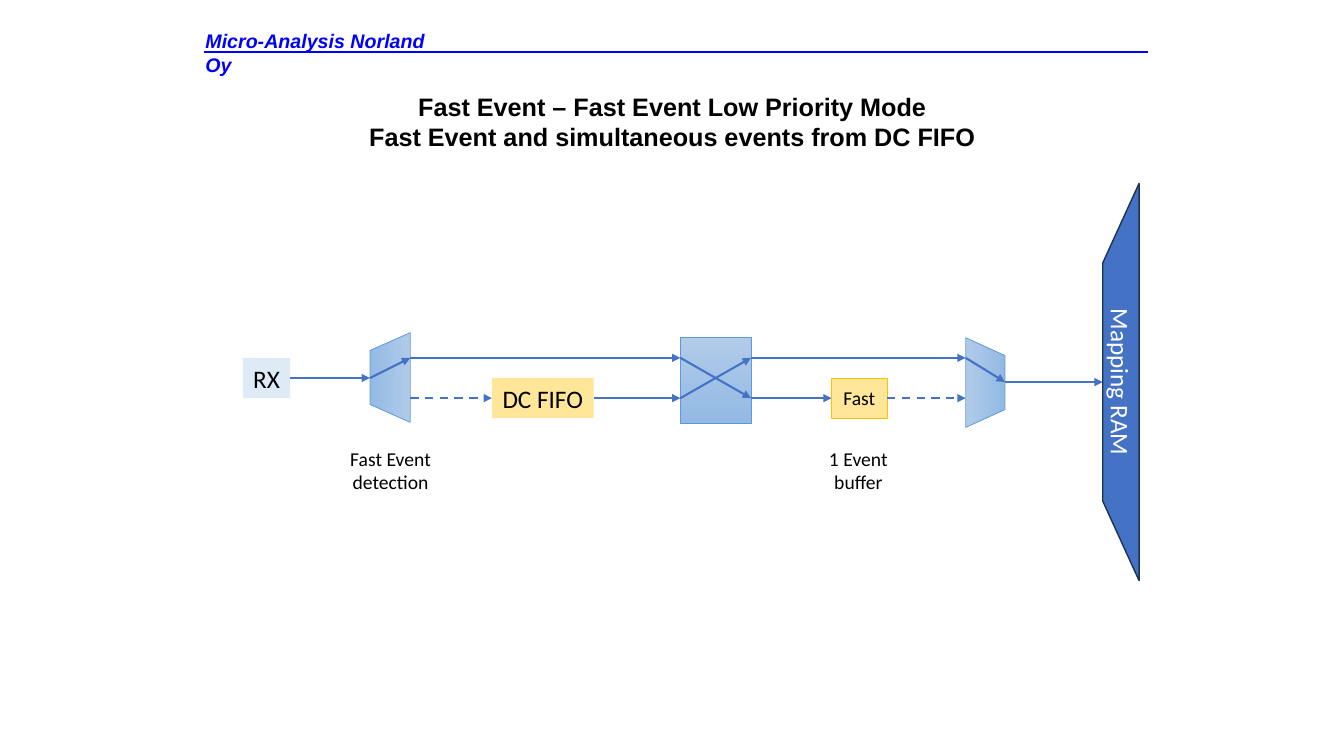
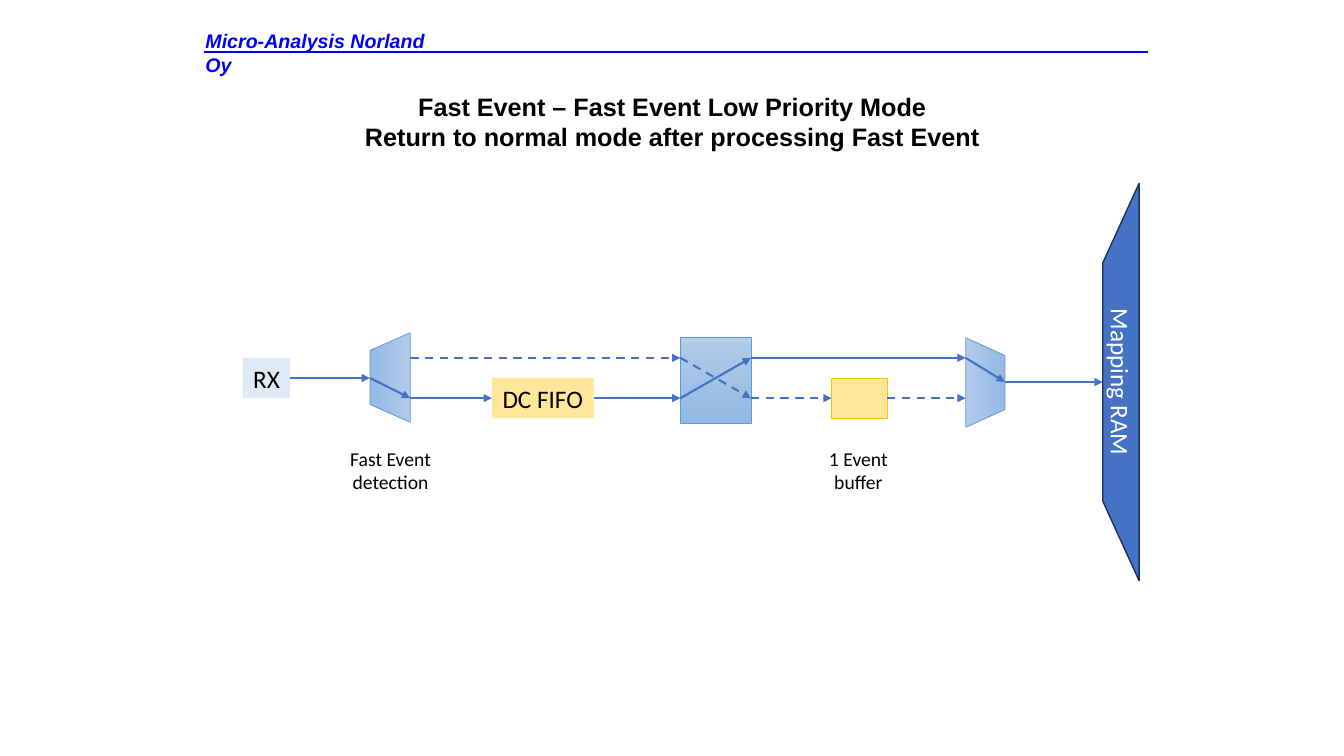
"""Build two slides on the Fast Event low priority mode."""
from dataclasses import dataclass

from lxml import etree
from pptx import Presentation, util as u
from pptx.dml.color import RGBColor
from pptx.enum import dml, shapes, text
from pptx.oxml.ns import qn

CELL = 0.1
COLUMNS, ROWS = 133.33, 75
UPPER, MIDDLE, LOWER = 35.5, 37.5, 39.5
EXIT = 37.9
BLOCK_HEIGHT = 4


@dataclass(frozen=True)
class Theme:
    """Colours, fonts and type sizes of the deck."""
    title_font: str = "Arial"
    body_font: str = "Calibri"
    large: int = 18
    small: int = 14
    ink: str = "000000"
    paper: str = "FFFFFF"
    brand: str = "0000FF"
    pale: str = "DEEBF7"
    amber: str = "FFE699"
    amber_edge: str = "FFC000"
    switch: tuple = ("B1CBE9", "93B9E4")
    switch_edge: str = "5B9BD5"
    flow: str = "4472C4"
    memory_edge: str = "1E3256"
    thin: float = 0.5
    medium: float = 1
    thick: float = 1.5


def grid(*cells):
    """Turn grid cells into lengths."""
    return [u.Inches(cell * CELL) for cell in cells]


class Diagram:
    """Hold the style and the current slide, and draw its elements."""

    def __init__(self, deck, theme):
        self.deck = deck
        self.theme = theme
        self.page = None

    def set_text(self, box, lines, size, color, font=None, align=text.PP_ALIGN.CENTER,
                 bold=False, italic=False, wrap=False, anchor=text.MSO_ANCHOR.MIDDLE):
        """Fill a box with paragraphs in one style."""
        frame = box.text_frame
        frame.text = "\n".join(lines)
        frame.word_wrap = wrap
        frame.vertical_anchor = anchor
        for para in frame.paragraphs:
            para.alignment = align
            para.font.name = font or self.theme.body_font
            para.font.size = u.Pt(size)
            para.font.bold = bold
            para.font.italic = italic
            para.font.color.rgb = RGBColor.from_string(color)

    def start(self, *lines):
        """Add a page with its title, company name and rule."""
        theme = self.theme
        self.page = self.deck.slides.add_slide(self.deck.slide_layouts[5])
        title = self.page.shapes.title
        title.left, title.top, title.width, title.height = grid(21.7, 8.1, 90, 7.9)
        self.set_text(title, lines, theme.large, theme.ink, theme.title_font,
                      bold=True, wrap=True)
        company = self.page.shapes.add_textbox(*grid(19.4, 2.4, 26, 3.3))
        self.set_text(company, ["Micro-Analysis Norland Oy"], theme.small, theme.brand,
                      theme.title_font, text.PP_ALIGN.LEFT, bold=True, italic=True,
                      wrap=True, anchor=text.MSO_ANCHOR.TOP)
        self.link((20.2, 5.2), (113.9, 5.2), color=theme.brand, arrow=False)

    def block(self, left, top, width, height, fill, edge=None, weight=None,
              label="", size=None, color=None,
              kind=shapes.MSO_SHAPE.RECTANGLE, turn=0):
        """Draw a shape by its visible frame, turned by quarter turns."""
        if turn:
            left, top = left + (width - height) / 2, top + (height - width) / 2
            width, height = height, width
        box = self.page.shapes.add_shape(kind, *grid(left, top, width, height))
        box.rotation = turn
        box.shadow.inherit = False
        if isinstance(fill, tuple):
            box.fill.gradient()
            box.fill.gradient_angle = 270
            for stop, shade in zip(box.fill.gradient_stops, fill):
                stop.color.rgb = RGBColor.from_string(shade)
        else:
            box.fill.solid()
            box.fill.fore_color.rgb = RGBColor.from_string(fill)
        if edge:
            box.line.color.rgb = RGBColor.from_string(edge)
            box.line.width = u.Pt(weight)
        else:
            box.line.fill.background()
        if label:
            self.set_text(box, [label], size or self.theme.large,
                          color or self.theme.ink)
        return box

    def switch(self, left, top, width, height, **options):
        """Draw a shaded switching element."""
        theme = self.theme
        return self.block(left, top, width, height, theme.switch,
                          theme.switch_edge, theme.thin, **options)

    def caption(self, left, top, width, height, *lines):
        """Add a small centred caption."""
        box = self.page.shapes.add_textbox(*grid(left, top, width, height))
        self.set_text(box, lines, self.theme.small, self.theme.ink)

    def link(self, start, end, dashed=False, color=None, arrow=True):
        """Draw a line between points, or from right side to left side of boxes."""
        def place(target, share):
            if isinstance(target, tuple):
                return grid(*target)
            return (target.left + int(target.width * share),
                    target.top + target.height // 2)

        line = self.page.shapes.add_connector(
            shapes.MSO_CONNECTOR.STRAIGHT, *place(start, 1), *place(end, 0))
        if not isinstance(start, tuple):
            line.begin_connect(start, 3)
        if not isinstance(end, tuple):
            line.end_connect(end, 1)
        line.line.color.rgb = RGBColor.from_string(color or self.theme.flow)
        line.line.width = u.Pt(self.theme.thick)
        if dashed:
            line.line.dash_style = dml.MSO_LINE.DASH
        properties = line._element.spPr
        if arrow:
            etree.SubElement(properties.find(qn("a:ln")), qn("a:tailEnd"),
                             type="triangle")
        etree.SubElement(properties, qn("a:effectLst"))

    def event_path(self, fast):
        """Draw the event path, with or without a Fast Event in progress."""
        theme = self.theme
        trapezoid = shapes.MSO_SHAPE.FLOWCHART_MANUAL_OPERATION
        process = shapes.MSO_SHAPE.FLOWCHART_PROCESS
        split, fork, cross, swap, join, merge, memory = (
            36.7, 40.7, 67.5, 74.5, 95.8, 99.7, 109.4)

        receiver = self.block(24.1, MIDDLE - BLOCK_HEIGHT / 2, 4.7, BLOCK_HEIGHT,
                              theme.pale, label="RX")
        queue = self.block(48.8, LOWER - BLOCK_HEIGHT / 2, 10.1, BLOCK_HEIGHT,
                           theme.amber, label="DC FIFO")
        buffer = self.block(82.5, LOWER - BLOCK_HEIGHT / 2, 5.5, BLOCK_HEIGHT,
                            theme.amber, theme.amber_edge, theme.thin,
                            "Fast" if fast else "", theme.small, kind=process)
        self.switch(split, 33, fork - split, 8.9, kind=trapezoid, turn=90)
        self.switch(cross, 33.5, swap - cross, 8.5, kind=process)
        self.switch(join, 33.5, merge - join, 8.9, kind=trapezoid, turn=270)
        self.block(memory, 18.2, 3.6, 39.4, theme.flow, theme.memory_edge,
                   theme.medium, "Mapping RAM", color=theme.paper,
                   kind=trapezoid, turn=90)
        self.caption(33.7, 43.8, 10.1, 5.7, "Fast Event", "detection")
        self.caption(81.2, 43.8, 7.9, 5.7, "1 Event", "buffer")

        for start, end, dashed in (
            (receiver, (split, MIDDLE), False),
            ((split, MIDDLE), (fork, UPPER if fast else LOWER), False),
            ((fork, UPPER), (cross, UPPER), not fast),
            ((fork, LOWER), queue, fast),
            (queue, (cross, LOWER), False),
            ((cross, LOWER), (swap, UPPER), False),
            ((cross, UPPER), (swap, LOWER), not fast),
            ((swap, UPPER), (join, UPPER), False),
            ((swap, LOWER), buffer, not fast),
            (buffer, (join, LOWER), True),
            ((join, UPPER), (merge, EXIT), False),
            ((merge, EXIT), (memory, EXIT), False),
        ):
            self.link(start, end, dashed)


def main():
    """Build and save the deck."""
    deck = Presentation()
    deck.slide_width, deck.slide_height = grid(COLUMNS, ROWS)
    diagram = Diagram(deck, Theme())
    for subtitle, fast in (
        ("Fast Event and simultaneous events from DC FIFO", True),
        ("Return to normal mode after processing Fast Event", False),
    ):
        diagram.start("Fast Event – Fast Event Low Priority Mode", subtitle)
        diagram.event_path(fast)
    deck.save("out.pptx")


if __name__ == "__main__":
    main()
